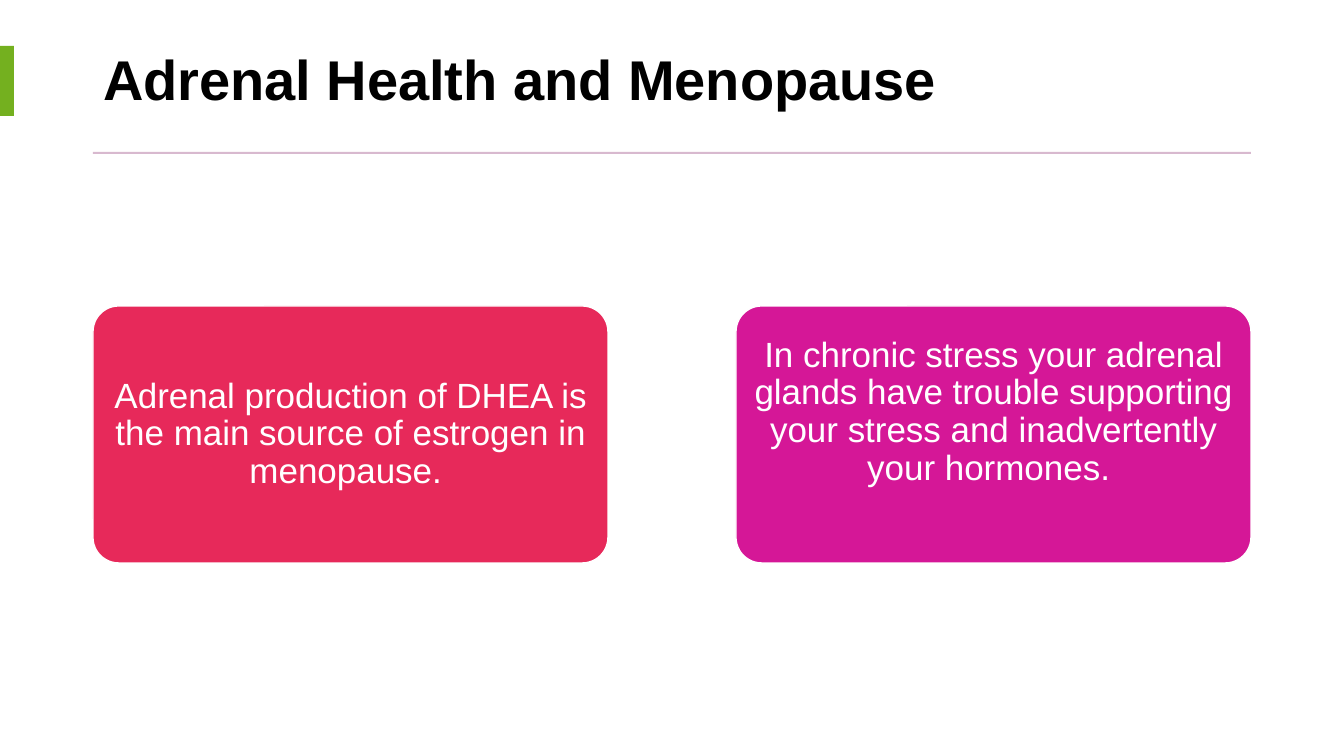
import pptx
import pptx.util
import pptx.dml.color
import pptx.enum.shapes
import pptx.enum.text

# Content
TITLE = "Adrenal Health and Menopause"
# text, fill name, extra space below the text in px
CARDS = [
    ("Adrenal production of DHEA is the main source of estrogen in menopause. ", "red", 0),
    ("In chronic stress your adrenal glands have trouble supporting your stress "
     "and inadvertently your hormones. ", "magenta", 44),
]

THEME = {
    "font": "Arial",
    "colors": {"black": "000000", "white": "FFFFFF", "green": "74B01F",
               "mauve": "D8B9CF", "red": "E7295A", "magenta": "D51797"},
    "sizes": {"title": 40, "card": 25},
}

# Layout in px
SLIDE_SIZE = (1344, 756)
LEFT, CONTENT_WIDTH = 93, 1158
TITLE_BOX = (LEFT, 27, CONTENT_WIDTH, 111)
ACCENT_BOX = (0, 46, 14, 70)
RULE_BOX = (LEFT, 152, CONTENT_WIDTH, 2)
CARD_TOP, CARD_WIDTH, CARD_HEIGHT = 306, 515, 257
CARD_INSET_X, CARD_INSET_Y = 5, 3

SHAPES = pptx.enum.shapes.MSO_SHAPE
ALIGN = pptx.enum.text.PP_ALIGN


def px(length):
    return pptx.util.Emu(round(length * 914400 / 100.8))


def color(name):
    return pptx.dml.color.RGBColor.from_string(THEME["colors"][name])


def apply(target, values):
    for name, value in values.items():
        setattr(target, name, value)


def add_block(slide, kind, box, fill, line=None):
    shape = slide.shapes.add_shape(kind, *map(px, box))
    shape.shadow.inherit = False
    shape.fill.solid()
    shape.fill.fore_color.rgb = color(fill)
    if line:
        shape.line.color.rgb = color(line)
        shape.line.width = pptx.util.Pt(1)
    else:
        shape.line.fill.background()
    return shape


def write_text(shape, text, role, text_color, bold, alignment, frame_values):
    frame = shape.text_frame
    frame.text = text
    apply(frame, {"word_wrap": True,
                  "auto_size": pptx.enum.text.MSO_AUTO_SIZE.NONE,
                  "vertical_anchor": pptx.enum.text.MSO_ANCHOR.MIDDLE,
                  **frame_values})
    paragraph = frame.paragraphs[0]
    apply(paragraph, {"alignment": alignment, "line_spacing": 0.9})
    font = paragraph.runs[0].font
    apply(font, {"name": THEME["font"], "bold": bold,
                 "size": pptx.util.Pt(THEME["sizes"][role])})
    font.color.rgb = color(text_color)


def main():
    presentation = pptx.Presentation()
    apply(presentation, dict(zip(("slide_width", "slide_height"), map(px, SLIDE_SIZE))))
    slide = presentation.slides.add_slide(presentation.slide_layouts[5])

    # Title with accent bar and rule
    title = slide.shapes.title
    apply(title, dict(zip(("left", "top", "width", "height"), map(px, TITLE_BOX))))
    write_text(title, TITLE, "title", "black", True, ALIGN.LEFT, {})
    add_block(slide, SHAPES.RECTANGLE, ACCENT_BOX, "green")
    add_block(slide, SHAPES.RECTANGLE, RULE_BOX, "mauve")

    # Cards spread evenly between the content edges
    step = (CONTENT_WIDTH - CARD_WIDTH) / (len(CARDS) - 1)
    for index, (text, fill, space_below) in enumerate(CARDS):
        box = (LEFT + index * step, CARD_TOP, CARD_WIDTH, CARD_HEIGHT)
        card = add_block(slide, SHAPES.ROUNDED_RECTANGLE, box, fill, "white")
        card.adjustments[0] = 0.1
        write_text(card, text, "card", "white", False, ALIGN.CENTER, {
            "margin_left": px(CARD_INSET_X), "margin_right": px(CARD_INSET_X),
            "margin_top": px(CARD_INSET_Y),
            "margin_bottom": px(CARD_INSET_Y + space_below)})

    presentation.save("out.pptx")


if __name__ == "__main__":
    main()
